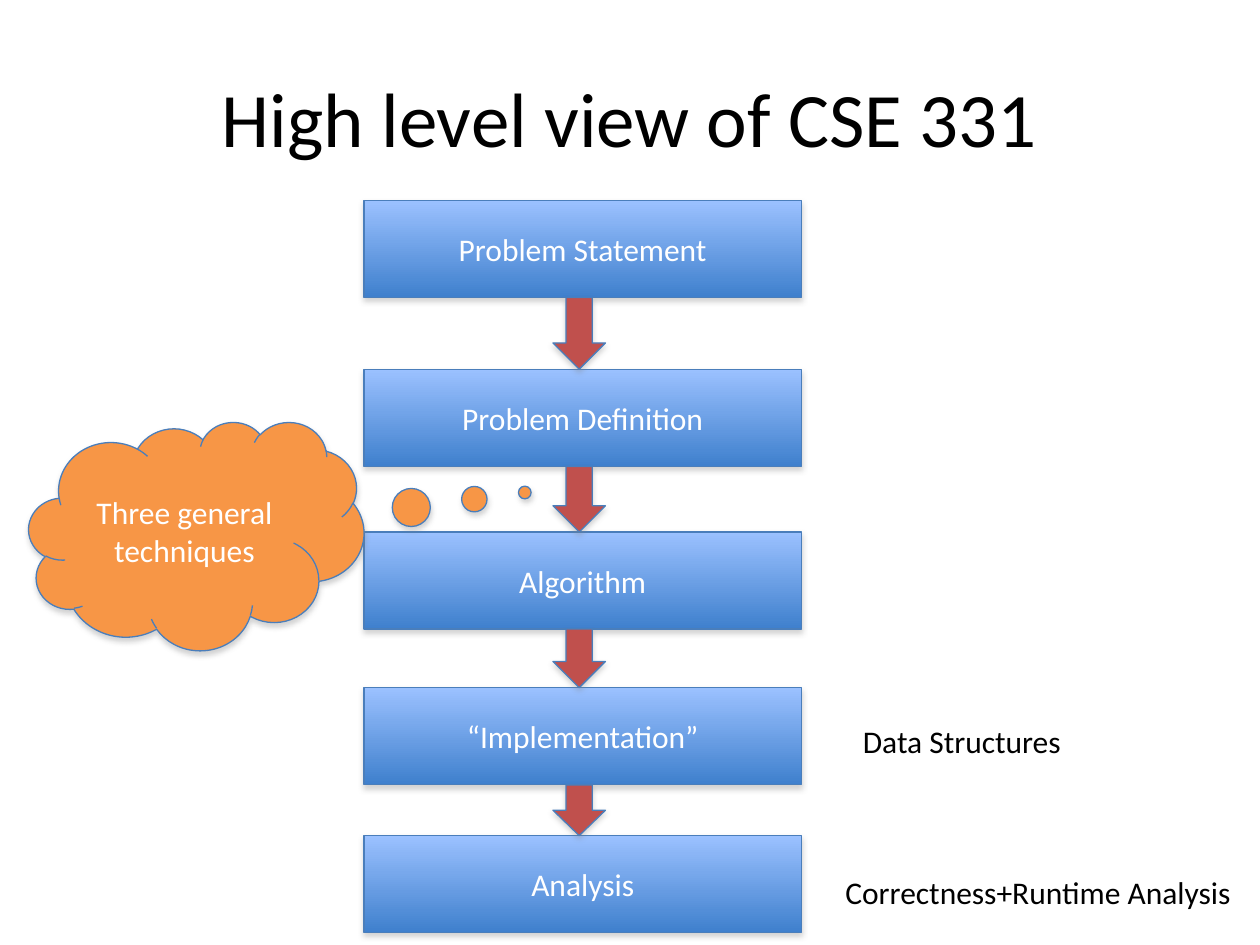
"""Build the slide that outlines the steps of CSE 331."""
import pptx
import pptx.dml.color
import pptx.enum.shapes
import pptx.enum.text
import pptx.oxml
import pptx.oxml.ns
import pptx.util
from lxml import etree

Pt = pptx.util.Pt
RGBColor = pptx.dml.color.RGBColor
MSO_SHAPE = pptx.enum.shapes.MSO_SHAPE
PP_ALIGN = pptx.enum.text.PP_ALIGN
MSO_ANCHOR = pptx.enum.text.MSO_ANCHOR
MSO_AUTO_SIZE = pptx.enum.text.MSO_AUTO_SIZE

BLACK = RGBColor(0x00, 0x00, 0x00)
WHITE = RGBColor(0xFF, 0xFF, 0xFF)
STEP_TOP = RGBColor(0x9B, 0xC1, 0xFF)
STEP_BOTTOM = RGBColor(0x3F, 0x80, 0xCD)
OUTLINE = RGBColor(0x4A, 0x7E, 0xBB)
ARROW_RED = RGBColor(0xC0, 0x50, 0x4D)
CLOUD_ORANGE = RGBColor(0xF7, 0x96, 0x46)

STEP_LEFT, STEP_WIDTH, STEP_HEIGHT = 208, 250, 55.5
ARROW_LEFT, ARROW_WIDTH = 316, 30
STEPS = [
    ("Problem Statement", 114.5),
    ("Problem Definition", 211),
    ("Algorithm", 304),
    ("“Implementation”", 393),
    ("Analysis", 477.5),
]
REMARKS = [
    ("Data Structures", 486, 409, 129),
    ("Correctness+Runtime Analysis", 476, 495.5, 237),
]
CENTERED = {"vertical_anchor": MSO_ANCHOR.MIDDLE, "word_wrap": True}
UNWRAPPED = {"word_wrap": False, "auto_size": MSO_AUTO_SIZE.SHAPE_TO_FIT_TEXT}
SHADOW = (
    '<a:outerShdw xmlns:a="http://schemas.openxmlformats.org/drawingml/2006/main"'
    ' blurRad="40000" dist="23000" dir="5400000" rotWithShape="0">'
    '<a:srgbClr val="808080"><a:alpha val="35000"/></a:srgbClr></a:outerShdw>'
)


def apply_format(target, values):
    """Set each attribute named in values on the target."""
    for name, value in values.items():
        setattr(target, name, value)


def write_text(holder, words, color, frame_format, size=18, align=PP_ALIGN.CENTER):
    """Write one formatted paragraph into a shape."""
    frame = holder.text_frame
    apply_format(frame, frame_format)
    paragraph = frame.paragraphs[0]
    paragraph.alignment = align
    run = paragraph.add_run()
    run.text = words
    apply_format(run.font, {"name": "Calibri", "size": Pt(size)})
    run.font.color.rgb = color


def add_figure(slide, kind, left, top, width, height):
    """Add a preset shape with the common outline and soft shadow."""
    figure = slide.shapes.add_shape(kind, Pt(left), Pt(top), Pt(width), Pt(height))
    figure.line.color.rgb = OUTLINE
    figure.line.width = Pt(0.75)
    figure.shadow.inherit = False
    effects = figure._element.spPr.find(pptx.oxml.ns.qn("a:effectLst"))
    effects.append(etree.fromstring(SHADOW))
    return figure


def fill_solid(figure, color):
    """Fill a shape with one colour."""
    figure.fill.solid()
    figure.fill.fore_color.rgb = color


def add_title(slide, words):
    """Place and write the slide title."""
    title = slide.shapes.title
    apply_format(title, {"left": Pt(36), "top": Pt(21.6),
                         "width": Pt(648), "height": Pt(90)})
    write_text(title, words, BLACK, CENTERED, size=44)


def add_step(slide, words, top):
    """Add one step of the process as a gradient box."""
    step = add_figure(slide, MSO_SHAPE.RECTANGLE, STEP_LEFT, top, STEP_WIDTH, STEP_HEIGHT)
    step.fill.gradient()
    step.fill.gradient_angle = 270
    for stop, position, color in zip(step.fill.gradient_stops, (0, 1), (STEP_TOP, STEP_BOTTOM)):
        stop.position = position
        stop.color.rgb = color
    write_text(step, words, WHITE, CENTERED)


def add_arrow(slide, top, bottom):
    """Add a block arrow that fills the gap between two steps."""
    arrow = add_figure(slide, MSO_SHAPE.DOWN_ARROW, ARROW_LEFT, top, ARROW_WIDTH, bottom - top)
    fill_solid(arrow, ARROW_RED)


def add_remark(slide, words, left, top, width):
    """Add a plain remark beside a step."""
    remark = slide.shapes.add_textbox(Pt(left), Pt(top), Pt(width), Pt(29))
    write_text(remark, words, BLACK, UNWRAPPED, align=PP_ALIGN.LEFT)


def add_thought(slide, words):
    """Add the thought cloud that points at the algorithm step."""
    cloud = add_figure(slide, MSO_SHAPE.CLOUD_CALLOUT, 16.5, 241, 191.5, 130.5)
    cloud.adjustments[0] = 0.98
    cloud.adjustments[1] = -0.19
    fill_solid(cloud, CLOUD_ORANGE)
    write_text(cloud, words, WHITE, CENTERED)


def main():
    """Build and save the slide."""
    deck = pptx.Presentation()
    apply_format(deck, {"slide_width": Pt(720), "slide_height": Pt(540)})
    slide = deck.slides.add_slide(deck.slide_layouts[5])
    add_title(slide, "High level view of CSE 331")
    for words, top in STEPS:
        add_step(slide, words, top)
    for (_, upper), (_, lower) in zip(STEPS, STEPS[1:]):
        add_arrow(slide, upper + STEP_HEIGHT, lower)
    for remark in REMARKS:
        add_remark(slide, *remark)
    add_thought(slide, "Three general techniques")
    deck.save("out.pptx")


if __name__ == "__main__":
    main()
